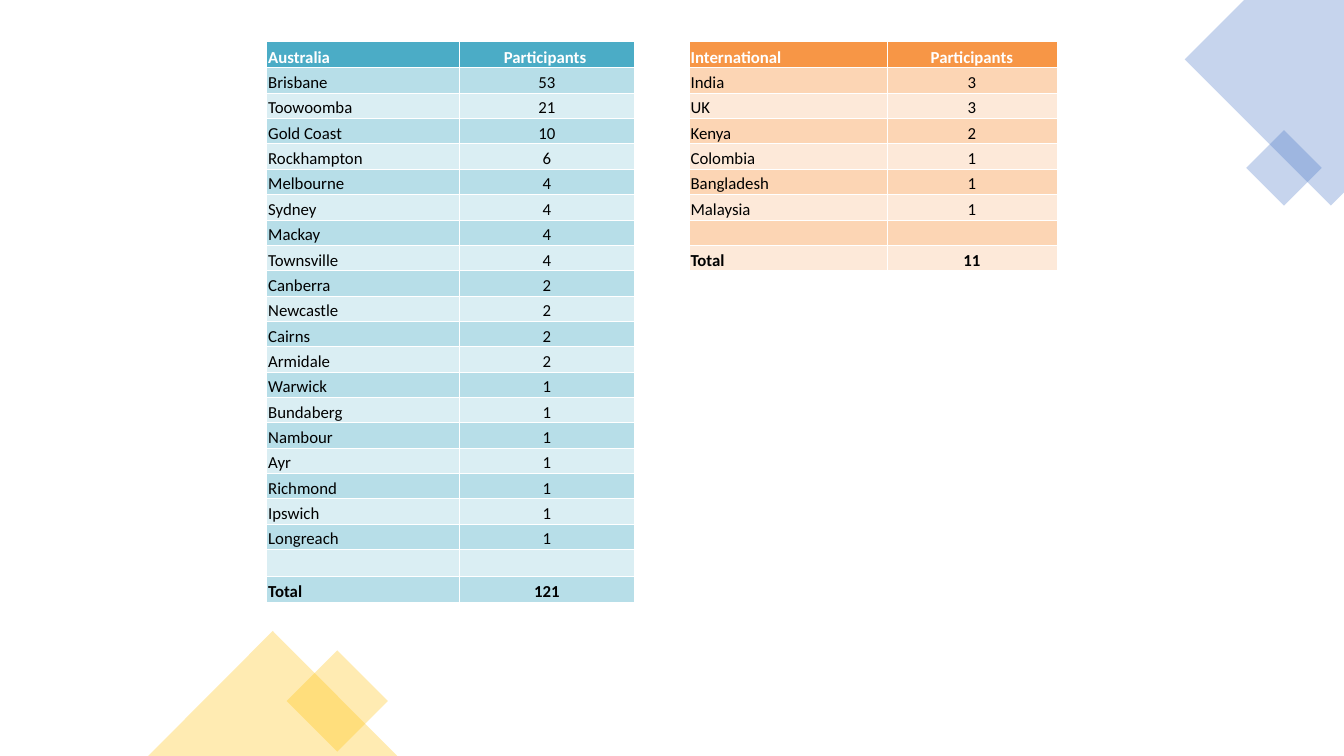
"""Builds a slide that lists workshop participants by Australian and international location."""
from lxml.etree import SubElement
from pptx import Presentation
from pptx.dml.color import RGBColor
from pptx.enum.shapes import MSO_SHAPE
from pptx.enum.text import MSO_ANCHOR, PP_ALIGN
from pptx.oxml.ns import qn
from pptx.util import Inches, Pt

COLORS = {
    "white": "FFFFFF", "black": "000000", "blue": "4472C4", "gold": "FFC000",
    "teal": "4BACC6", "teal_mid": "B7DEE8", "teal_pale": "DAEEF3",
    "orange": "F79646", "orange_mid": "FCD5B4", "orange_pale": "FDE9D9",
}
PLAIN_TABLE_STYLE = "{2D5ABB26-0587-4C30-8999-92F81FD0307C}"

AUSTRALIA = [
    ("Australia", "Participants "), ("Brisbane", "53"), ("Toowoomba", "21"),
    ("Gold Coast", "10"), ("Rockhampton", "6"), ("Melbourne", "4"), ("Sydney", "4"),
    ("Mackay", "4"), ("Townsville", "4"), ("Canberra", "2"), ("Newcastle", "2"),
    ("Cairns", "2"), ("Armidale", "2"), ("Warwick", "1"), ("Bundaberg", "1"),
    ("Nambour", "1"), ("Ayr", "1"), ("Richmond", "1"), ("Ipswich", "1"),
    ("Longreach", "1"), ("", ""), ("Total", "121"),
]
INTERNATIONAL = [
    ("International", "Participants"), ("India", "3"), ("UK", "3"), ("Kenya", "2"),
    ("Colombia", "1"), ("Bangladesh", "1"), ("Malaysia", "1"), ("", ""), ("Total", "11"),
]
COLUMN_WIDTHS = [1.91, 1.73, 0.55, 1.96, 1.68]
ROW_COUNT = 25
TALL_ROWS = (0, 21, 23, 24)
TALL_HEIGHT = 0.27
TABLE_HEIGHT = 6.37
ROW_HEIGHT = (TABLE_HEIGHT - len(TALL_ROWS) * TALL_HEIGHT) / (ROW_COUNT - len(TALL_ROWS))


class ParticipantSlide:
    """Holds the slide and its text style, and draws each kind of element."""

    def __init__(self, slide, font="Calibri", size=12):
        self.slide, self.font, self.size = slide, font, size

    def color(self, name):
        return RGBColor.from_string(COLORS[name])

    def tint(self, shape, color, opacity=30):
        shape.shadow.inherit = False
        shape.line.fill.background()
        shape.fill.solid()
        shape.fill.fore_color.rgb = self.color(color)
        srgb = shape.fill._xPr.find(qn("a:solidFill")).find(qn("a:srgbClr"))
        SubElement(srgb, qn("a:alpha"), val=str(opacity * 1000))
        return shape

    def preset(self, kind, left, top, width, height, color, rotation=0):
        shape = self.slide.shapes.add_shape(
            kind, Inches(left), Inches(top), Inches(width), Inches(height))
        shape.rotation = rotation
        return self.tint(shape, color)

    def outline(self, points, color):
        start, *rest = [(Inches(x), Inches(y)) for x, y in points]
        builder = self.slide.shapes.build_freeform(*start)
        builder.add_line_segments(rest, close=True)
        return self.tint(builder.convert_to_shape(), color)

    def table(self, left, top):
        frame = self.slide.shapes.add_table(
            ROW_COUNT, len(COLUMN_WIDTHS), Inches(left), Inches(top),
            Inches(sum(COLUMN_WIDTHS)), Inches(TABLE_HEIGHT))
        table = frame.table
        table.first_row = table.horz_banding = False
        table._tbl.tblPr.find(qn("a:tableStyleId")).text = PLAIN_TABLE_STYLE
        for column, width in zip(table.columns, COLUMN_WIDTHS):
            column.width = Inches(width)
        for index, row in enumerate(table.rows):
            row.height = Inches(TALL_HEIGHT if index in TALL_ROWS else ROW_HEIGHT)
        for cell in table.iter_cells():
            self.text(cell, "")
        return table

    def text(self, cell, wording, color="black", bold=False, align=PP_ALIGN.LEFT):
        cell.margin_left = cell.margin_right = cell.margin_top = Inches(0.01)
        cell.margin_bottom = 0
        cell.vertical_anchor = MSO_ANCHOR.BOTTOM
        cell.text = wording
        paragraph = cell.text_frame.paragraphs[0]
        paragraph.alignment = align
        paragraph.font.name = self.font
        paragraph.font.size = Pt(self.size)
        paragraph.font.bold = bold
        paragraph.font.color.rgb = self.color(color)
        if not wording and paragraph._p.find(qn("a:endParaRPr")) is None:
            SubElement(paragraph._p, qn("a:endParaRPr"), sz=str(self.size * 100))

    def borders(self, cell, sides):
        for side in sides:
            line = SubElement(cell._tc.get_or_add_tcPr(), qn(f"a:ln{side}"), w=str(Pt(0.5)))
            fill = SubElement(line, qn("a:solidFill"))
            SubElement(fill, qn("a:srgbClr"), val=COLORS["white"])

    def listing(self, table, first_column, entries, hue):
        last = len(entries) - 1
        for index, entry in enumerate(entries):
            shade = hue if index == 0 else hue + ("_mid" if index % 2 else "_pale")
            edges = ("T" if index else "") + ("B" if index < last else "")
            for offset, wording in enumerate(entry):
                cell = table.cell(index + 1, first_column + offset)
                self.text(cell, wording, "black" if index else "white",
                          index in (0, last), PP_ALIGN.CENTER if offset else PP_ALIGN.LEFT)
                self.borders(cell, ("L" if offset else "R") + edges)
                cell.fill.solid()
                cell.fill.fore_color.rgb = self.color(shade)


def main():
    deck = Presentation()
    deck.slide_width, deck.slide_height = Inches(13.33), Inches(7.5)
    page = ParticipantSlide(deck.slides.add_slide(deck.slide_layouts[6]))

    corner = page.outline(
        [(13.33, 0), (12.34, 0), (11.75, 0.59), (13.2, 2.04), (13.33, 1.91)], "blue")
    diamond = page.preset(MSO_SHAPE.RECTANGLE, 12.47, 1.4, 0.53, 0.53, "blue", 315)
    page.slide.shapes.add_group_shape([corner, diamond])
    page.preset(MSO_SHAPE.RECTANGLE, 2.99, 6.6, 0.71, 0.71, "gold", 45)
    page.preset(MSO_SHAPE.ISOSCELES_TRIANGLE, 1.47, 6.26, 2.47, 1.24, "gold")

    participants = page.table(2.65, 0.15)
    page.listing(participants, 0, AUSTRALIA, "teal")
    page.listing(participants, 3, INTERNATIONAL, "orange")
    deck.save("out.pptx")


if __name__ == "__main__":
    main()
